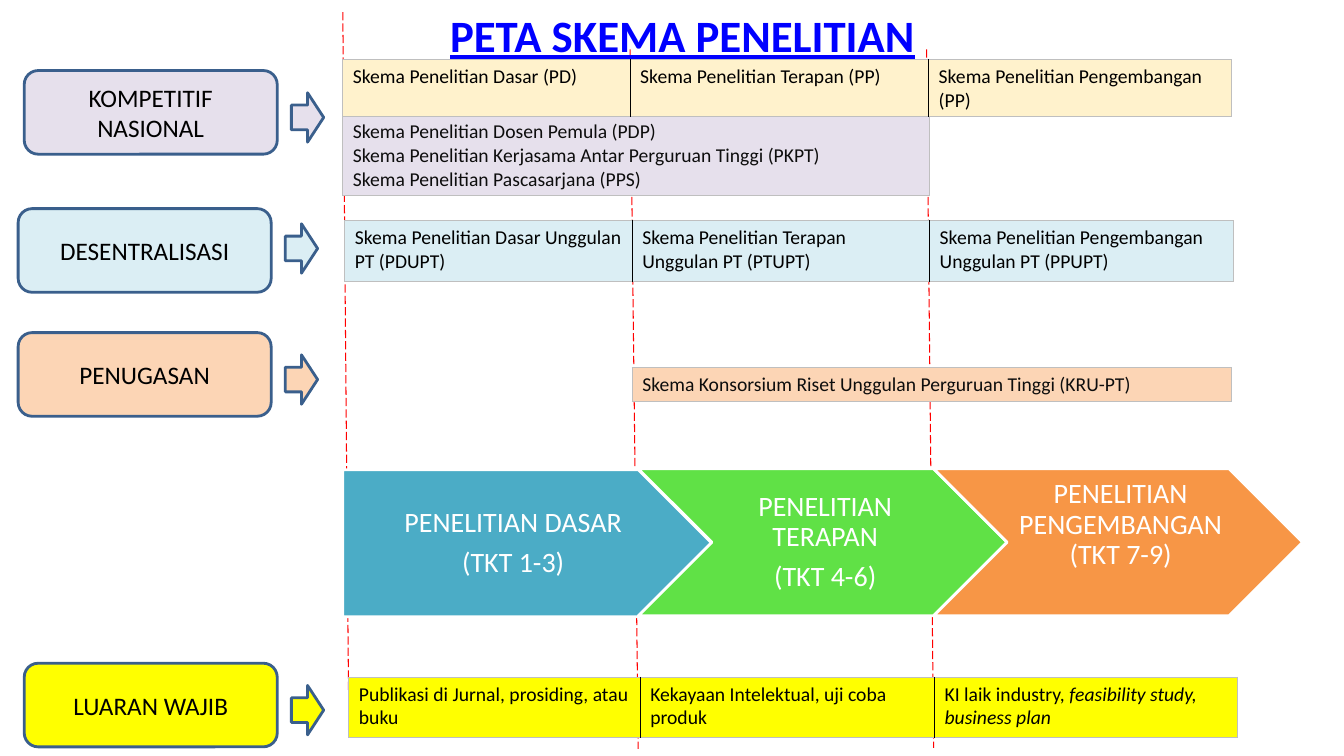
from lxml import etree
from pptx import Presentation
from pptx import util as u
from pptx.dml.color import RGBColor
from pptx.enum import dml, shapes, text
from pptx.oxml import ns

Inches, Pt = u.Inches, u.Pt
FONT = "Calibri"
COLORS = {
    "lilac": "E6E0EC", "cream": "FFF2CC", "ice": "DBEEF4", "peach": "FCD5B5",
    "yellow": "FFFF00", "teal": "4BACC6", "green": "60E146", "orange": "F79646",
    "outline": "3A5F8C", "guide": "FF0000", "title": "0000FF", "white": "FFFFFF",
    "black": "000000", "ink": "0D0D0D", "edge": "BFBFBF",
}


def rgb(name):
    return RGBColor.from_string(COLORS[name])


def add_run(paragraph, words, size, color, **style):
    run = paragraph.add_run()
    run.text = words
    run.font.name, run.font.size = FONT, Pt(size)
    run.font.color.rgb = rgb(color)
    for key, value in style.items():
        setattr(run.font, key, value)


def add_preset(slide, kind, box, fill, line):
    part = slide.shapes.add_shape(kind, *map(Inches, box))
    part.shadow.inherit = False
    part.fill.solid()
    part.fill.fore_color.rgb = rgb(fill)
    part.line.color.rgb = rgb(line)
    part.line.width = Pt(2)
    return part


def add_title(slide, box, words):
    title = slide.shapes.add_textbox(*map(Inches, box)).text_frame
    title.word_wrap = True
    heading = title.paragraphs[0]
    heading.alignment = text.PP_ALIGN.CENTER
    heading.line_spacing = 0.9
    add_run(heading, words, 32, "title", bold=True, underline=True)


def add_guide(slide, x1, y1, x2, y2):
    guide = slide.shapes.add_connector(
        shapes.MSO_CONNECTOR.STRAIGHT, *map(Inches, (x1, y1, x2, y2)))
    guide.line.color.rgb = rgb("guide")
    guide.line.width = Pt(0.75)
    guide.line.dash_style = dml.MSO_LINE.LONG_DASH
    etree.SubElement(guide._element.spPr, ns.qn("a:effectLst"))


def add_category(slide, left, top, arrow_top, words, fill):
    """Rounded label with the arrow that follows it."""
    label = add_preset(slide, shapes.MSO_SHAPE.ROUNDED_RECTANGLE,
                       (left, top, 2.51, 0.83), fill, "outline")
    frame = label.text_frame
    frame.word_wrap = True
    frame.vertical_anchor = text.MSO_ANCHOR.MIDDLE
    frame.paragraphs[0].alignment = text.PP_ALIGN.CENTER
    add_run(frame.paragraphs[0], words, 18, "black")
    add_preset(slide, shapes.MSO_SHAPE.RIGHT_ARROW,
               (left + 2.65, arrow_top, 0.32, 0.49), fill, "outline")


def add_stage(slide, box, kind, fill, text_left, text_width, lines, bottom=0.06):
    """Process arrow and the caption over it."""
    left, top, width, height = box
    add_preset(slide, kind, box, fill, "white")
    caption = slide.shapes.add_textbox(
        *map(Inches, (left + text_left, top, text_width, height))).text_frame
    caption.word_wrap = True
    caption.vertical_anchor = text.MSO_ANCHOR.MIDDLE
    caption.margin_left = Inches(0.09 if text_left else 0.12)
    caption.margin_right = Inches(0.03)
    caption.margin_top, caption.margin_bottom = Inches(0.06), Inches(bottom)
    for i, words in enumerate(lines):
        line = caption.add_paragraph() if i else caption.paragraphs[0]
        line.alignment = text.PP_ALIGN.CENTER
        line.line_spacing = 0.9
        line.space_after = Pt(7)
        add_run(line, words, 20, "white")


def set_borders(cell, first, last):
    """Grey outside, black between columns; goes ahead of the cell fill."""
    edges = {"lnL": first, "lnR": last, "lnT": True, "lnB": True}
    props = cell._tc.get_or_add_tcPr()
    for i, (tag, outer) in enumerate(edges.items()):
        line = etree.Element(ns.qn("a:" + tag), w=str(Pt(0.75 if outer else 1)))
        solid = etree.SubElement(line, ns.qn("a:solidFill"))
        etree.SubElement(solid, ns.qn("a:srgbClr"),
                         val=COLORS["edge" if outer else "black"])
        props.insert(i, line)


def add_schemes(slide, left, top, height, widths, cells, fill, color="black"):
    """One-row table; a cell is a list of lines, a line a list of (words, italic)."""
    table = slide.shapes.add_table(
        1, len(widths), *map(Inches, (left, top, sum(widths), height))).table
    table.first_row = table.horz_banding = False
    for i, (width, lines) in enumerate(zip(widths, cells)):
        table.columns[i].width = Inches(width)
        cell = table.cell(0, i)
        cell.fill.solid()
        cell.fill.fore_color.rgb = rgb(fill)
        set_borders(cell, i == 0, i == len(widths) - 1)
        for j, line in enumerate(lines):
            frame = cell.text_frame
            paragraph = frame.add_paragraph() if j else frame.paragraphs[0]
            for words, italic in line:
                add_run(paragraph, words, 14, color, italic=italic)


def plain(*lines):
    return [[(words, False)] for words in lines]


def build_map(slide):
    # Dashed stage boundaries
    for guide in ((3.4, 0.12, 3.46, 7.25), (6.25, 0.49, 6.33, 7.43),
                  (9.19, 0.49, 9.26, 7.42)):
        add_guide(slide, *guide)

    # Research stages
    pentagon, chevron = shapes.MSO_SHAPE.PENTAGON, shapes.MSO_SHAPE.CHEVRON
    add_stage(slide, (3.4, 4.66, 3.66, 1.46), pentagon, "teal", 0, 3.29,
              ["PENELITIAN DASAR", "(TKT 1-3)"])
    add_stage(slide, (6.33, 4.65, 3.66, 1.46), chevron, "green", 0.73, 2.19,
              ["PENELITIAN TERAPAN", "(TKT 4-6)"])
    add_stage(slide, (9.26, 4.65, 3.66, 1.46), chevron, "orange", 0.73, 2.19,
              ["PENELITIAN PENGEMBANGAN (TKT 7-9)"], bottom=0.4)

    # Schemes and outputs
    add_schemes(slide, 3.4, 1.14, 0.8, [5.82], [plain(
        "Skema Penelitian Dosen Pemula (PDP)",
        "Skema Penelitian Kerjasama Antar Perguruan Tinggi (PKPT)",
        "Skema Penelitian Pascasarjana (PPS)")], "lilac", "ink")
    add_schemes(slide, 3.4, 0.59, 0.57, [2.85, 2.96, 3], [
        plain("Skema Penelitian Dasar (PD)"),
        plain("Skema Penelitian Terapan (PP)"),
        plain("Skema Penelitian Pengembangan (PP)")], "cream")
    add_schemes(slide, 3.42, 2.19, 0.6, [2.85, 2.95, 3.01], [
        plain("Skema Penelitian Dasar Unggulan PT (PDUPT)"),
        plain("Skema Penelitian Terapan Unggulan PT (PTUPT)"),
        plain("Skema Penelitian Pengembangan Unggulan PT (PPUPT)")], "ice")
    add_schemes(slide, 6.27, 3.65, 0.33, [5.94], [
        plain("Skema Konsorsium Riset Unggulan Perguruan Tinggi (KRU-PT)")],
        "peach", "ink")
    add_schemes(slide, 3.46, 6.72, 0.6, [2.89, 2.92, 3], [
        plain("Publikasi di Jurnal, prosiding, atau buku"),
        plain("Kekayaan Intelektual, uji coba produk"),
        [[("KI laik industry, ", False),
          ("feasibility study, business plan", True)]]], "yellow")

    # Categories on the left
    for category in ((0.24, 0.7, 0.92, "KOMPETITIF NASIONAL", "lilac"),
                     (0.18, 2.07, 2.22, "DESENTRALISASI", "ice"),
                     (0.18, 3.3, 3.52, "PENUGASAN", "peach"),
                     (0.24, 6.58, 6.8, "LUARAN WAJIB", "yellow")):
        add_category(slide, *category)

    add_title(slide, (1.02, 0.09, 11.5, 0.49), "PETA SKEMA PENELITIAN")


def main():
    deck = Presentation()
    deck.slide_width, deck.slide_height = Inches(13.33), Inches(7.5)
    build_map(deck.slides.add_slide(deck.slide_layouts[6]))
    deck.save("out.pptx")


if __name__ == "__main__":
    main()
